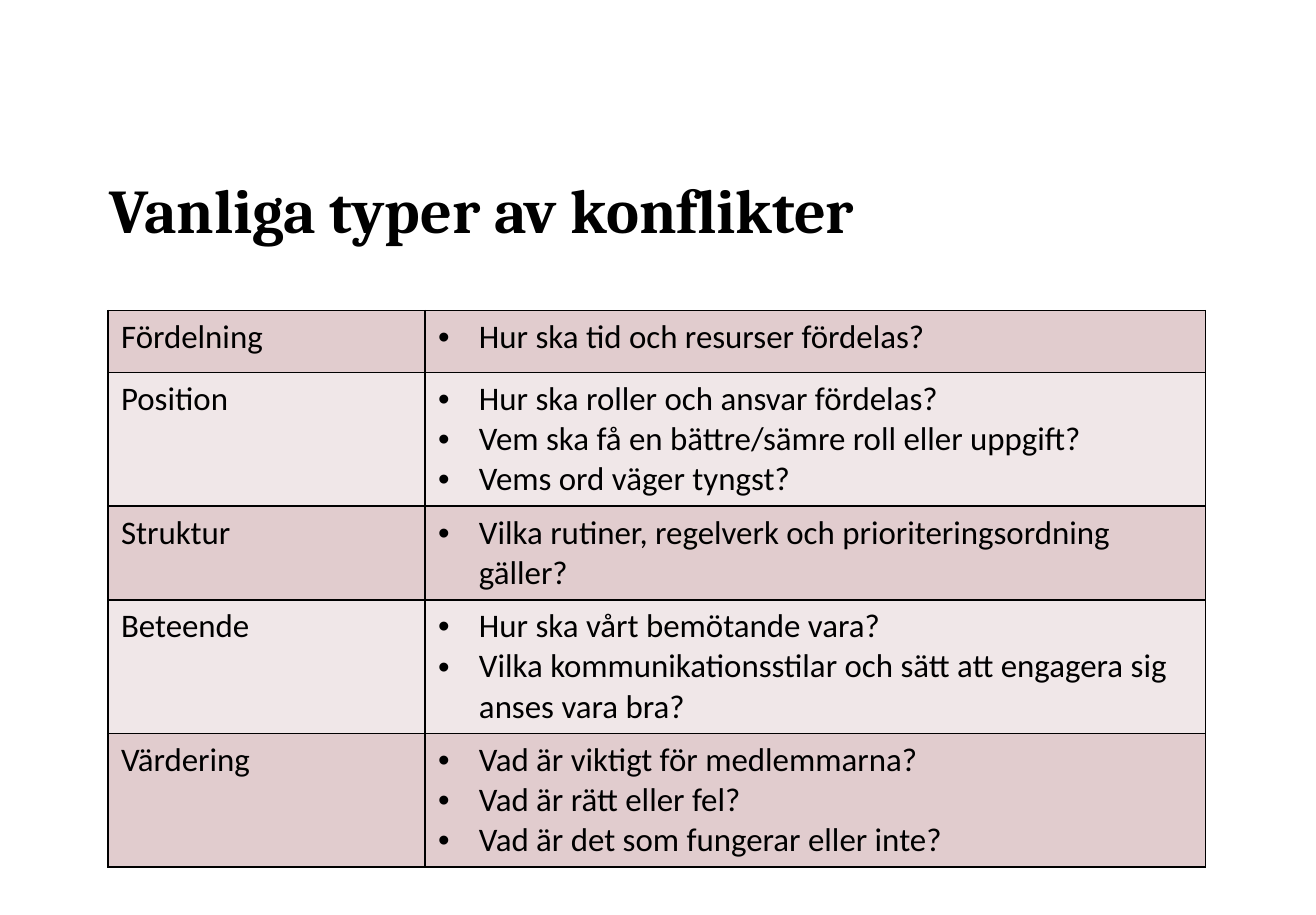
"""Build a slide with a table of common types of conflict."""
import lxml.etree
import pptx
import pptx.dml.color
import pptx.enum.text
import pptx.oxml.ns
import pptx.util

Inches, Pt = pptx.util.Inches, pptx.util.Pt
qn = pptx.oxml.ns.qn
Color = pptx.dml.color.RGBColor.from_string

TITLE = "Vanliga typer av konflikter"
ROWS = [
    ("Fördelning", 0.47, ["Hur ska tid och resurser fördelas?"]),
    ("Position", 0.87, [
        "Hur ska roller och ansvar fördelas?",
        "Vem ska få en bättre/sämre roll eller uppgift?",
        "Vems ord väger tyngst?",
    ]),
    ("Struktur", 0.56, ["Vilka rutiner, regelverk och prioriteringsordning gäller?"]),
    ("Beteende", 0.69, [
        "Hur ska vårt bemötande vara?",
        "Vilka kommunikationsstilar och sätt att engagera sig anses vara bra?",
    ]),
    ("Värdering", 0.69, [
        "Vad är viktigt för medlemmarna?",
        "Vad är rätt eller fel?",
        "Vad är det som fungerar eller inte?",
    ]),
]
THEME = {
    "title": {"name": "Cambria", "size": Pt(34), "bold": True},
    "body": {"name": "Calibri", "size": Pt(18), "bold": False},
    "ink": "000000",
    "bands": ("E1CCCE", "F0E7E8"),
    "line": Pt(1),
    "indent": Inches(0.31),
}
SIZE = {"slide_width": Inches(10), "slide_height": Inches(6.95)}
HEAD = {"left": Inches(0.83), "top": Inches(0.84), "width": Inches(8.35), "height": Inches(1.56)}
FRAME = {
    "margin_left": 0, "margin_right": 0, "margin_top": 0, "margin_bottom": 0,
    "word_wrap": True,
    "vertical_anchor": pptx.enum.text.MSO_ANCHOR.MIDDLE,
    "auto_size": pptx.enum.text.MSO_AUTO_SIZE.NONE,
}
LEFT, TOP = 0.82, 2.36
COLS = (2.41, 5.93)


def apply(target, values):
    """Set each named value on the target."""
    for name, value in values.items():
        setattr(target, name, value)


def write(para, text, style):
    """Add styled text to a paragraph."""
    run = para.add_run()
    run.text = text
    apply(run.font, THEME[style])
    run.font.color.rgb = Color(THEME["ink"])


def bullet(para):
    """Give a paragraph a hanging bullet."""
    props = para._p.get_or_add_pPr()
    props.set("marL", str(THEME["indent"]))
    props.set("indent", str(-THEME["indent"]))
    lxml.etree.SubElement(props, qn("a:buFont"), typeface="Arial")
    lxml.etree.SubElement(props, qn("a:buChar"), char="•")


def border(cell):
    """Draw a line on every side of a cell."""
    props = cell._tc.get_or_add_tcPr()
    for side in "LRTB":
        line = lxml.etree.SubElement(props, qn(f"a:ln{side}"), w=str(THEME["line"]))
        fill = lxml.etree.SubElement(line, qn("a:solidFill"))
        lxml.etree.SubElement(fill, qn("a:srgbClr"), val=THEME["ink"])


def fill_cell(cell, lines, band, listed):
    """Write the lines of a cell and paint it."""
    border(cell)
    cell.fill.solid()
    cell.fill.fore_color.rgb = Color(band)
    frame = cell.text_frame
    for spot, text in enumerate(lines):
        para = frame.add_paragraph() if spot else frame.paragraphs[0]
        if listed:
            bullet(para)
        write(para, text, "body")


def add_title(slide):
    """Place and format the title."""
    title = slide.shapes.title
    apply(title, HEAD)
    apply(title.text_frame, FRAME)
    para = title.text_frame.paragraphs[0]
    apply(para, {"alignment": pptx.enum.text.PP_ALIGN.LEFT, "line_spacing": 0.9})
    write(para, TITLE, "title")


def add_grid(slide):
    """Build the table of types and questions."""
    high = sum(row[1] for row in ROWS)
    box = map(Inches, (LEFT, TOP, sum(COLS), high))
    table = slide.shapes.add_table(len(ROWS), len(COLS), *box).table
    apply(table, {"first_row": False, "horz_banding": False})
    for col, width in zip(table.columns, COLS):
        col.width = Inches(width)
    for spot, (kind, height, asks) in enumerate(ROWS):
        table.rows[spot].height = Inches(height)
        band = THEME["bands"][spot % 2]
        fill_cell(table.cell(spot, 0), [kind], band, False)
        fill_cell(table.cell(spot, 1), asks, band, True)


def main():
    """Build and save the deck."""
    deck = pptx.Presentation()
    apply(deck, SIZE)
    slide = deck.slides.add_slide(deck.slide_layouts[5])
    add_title(slide)
    add_grid(slide)
    deck.save("out.pptx")


if __name__ == "__main__":
    main()
